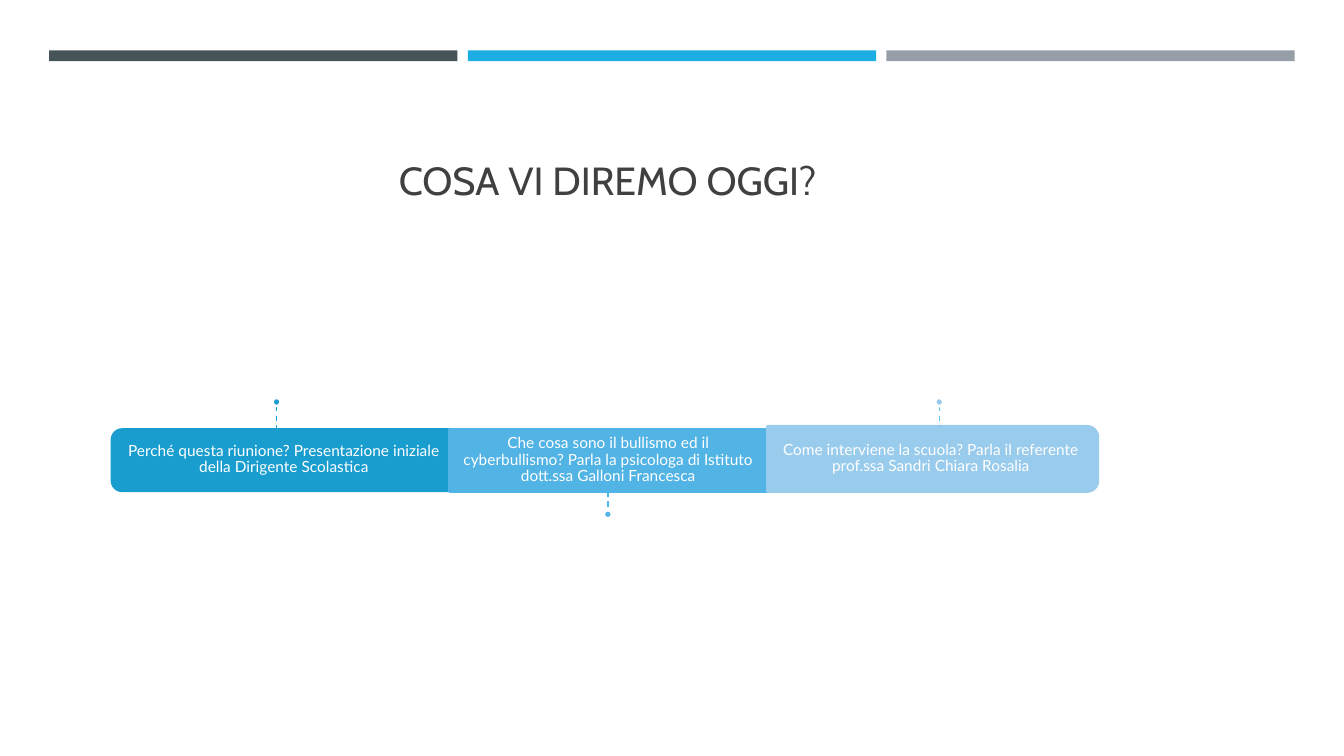
from pptx import Presentation
from pptx.dml.color import RGBColor
from pptx.enum import dml, shapes, text
from pptx.oxml.ns import qn
from pptx.util import Cm, Pt
from lxml import etree

WHITE = RGBColor(0xFF, 0xFF, 0xFF)
TITLE_GREY = RGBColor(0x40, 0x40, 0x40)
BAR_COLORS = [RGBColor(0x46, 0x53, 0x59), RGBColor(0x1C, 0xAD, 0xE4),
              RGBColor(0x96, 0x9F, 0xA7)]
SHAPE = shapes.MSO_SHAPE

TITLE = "COSA VI DIREMO OGGI?"
# Boxes are left, top, width, height in cm; turn is the block's rotation
TOPICS = [
    dict(label="Perché questa riunione? Presentazione iniziale della Dirigente Scolastica",
         block=(2.82, 10.82, 8.59, 1.55), label_box=(2.9, 10.88, 8.51, 1.4), turn=270,
         fill=RGBColor(0x19, 0x9D, 0xCF), stem=RGBColor(0x1B, 0xA5, 0xDA)),
    dict(label="Che cosa sono il bullismo ed il cyberbullismo? Parla la psicologa "
               "di Istituto dott.ssa Galloni Francesca",
         block=(11.33, 10.82, 8, 1.57), label_box=(11.33, 10.81, 8, 1.57), turn=0,
         fill=RGBColor(0x52, 0xB3, 0xE5), stem=RGBColor(0x48, 0xB8, 0xEC)),
    dict(label="Come interviene la scuola? Parla il referente prof.ssa Sandri Chiara Rosalia",
         block=(19.34, 10.74, 8.33, 1.65), label_box=(19.33, 10.82, 8.26, 1.47), turn=90,
         fill=RGBColor(0x99, 0xCB, 0xEC), stem=RGBColor(0x5A, 0xBE, 0xEF)),
]
STEM_X, STEM_STEP = 6.97, 8.35
DOT = 0.2
DOT_TOPS = [10.03, 12.86]  # above the band, below the band


def add_filled(slide, kind, box, fill, line=None):
    sp = slide.shapes.add_shape(kind, *map(Cm, box))
    sp.shadow.inherit = False
    sp.fill.solid()
    sp.fill.fore_color.rgb = fill
    if line is None:
        sp.line.fill.background()
    else:
        sp.line.color.rgb = line
        sp.line.width = Pt(1.75)
    return sp


def add_block(slide, box, turn, fill):
    if not turn:
        return add_filled(slide, SHAPE.RECTANGLE, box, fill, fill)
    # A quarter turn swaps width and height about the same centre
    left, top, width, height = box
    shift = (width - height) / 2
    upright = (left + shift, top - shift, height, width)
    sp = add_filled(slide, SHAPE.ROUND_2_SAME_RECTANGLE, upright, fill, fill)
    sp.rotation = turn
    return sp


def add_label(slide, box, label):
    tf = slide.shapes.add_textbox(*map(Cm, box)).text_frame
    tf.word_wrap = True
    tf.vertical_anchor = text.MSO_ANCHOR.MIDDLE
    tf.margin_left = tf.margin_right = tf.margin_top = tf.margin_bottom = Cm(0.23)
    p = tf.paragraphs[0]
    p.text = label
    p.alignment = text.PP_ALIGN.CENTER
    p.line_spacing = 0.9
    p.font.name, p.font.size = "Lato", Pt(11)
    p.font.color.rgb = WHITE


def add_stem(slide, x, top, bottom, color):
    line = slide.shapes.add_connector(shapes.MSO_CONNECTOR.STRAIGHT,
                                      Cm(x), Cm(top), Cm(x), Cm(bottom))
    line.line.color.rgb = color
    line.line.width = Pt(1)
    line.line.dash_style = dml.MSO_LINE.DASH
    etree.SubElement(line._element.spPr, qn("a:effectLst"))


def main():
    prs = Presentation()
    prs.slide_width, prs.slide_height = Cm(33.87), Cm(19.05)
    slide = prs.slides.add_slide(prs.slide_layouts[5])

    # Top bars
    for i, color in enumerate(BAR_COLORS):
        add_filled(slide, SHAPE.RECTANGLE, (1.24 + i * 10.55, 1.27, 10.29, 0.27), color)

    # Title
    title = slide.shapes.title
    title.left, title.top, title.width, title.height = Cm(0), Cm(1.96), Cm(30.63), Cm(3.3)
    tf = title.text_frame
    tf.auto_size = text.MSO_AUTO_SIZE.NONE
    tf.vertical_anchor = text.MSO_ANCHOR.BOTTOM
    p = tf.paragraphs[0]
    p.text = TITLE
    p.alignment = text.PP_ALIGN.CENTER
    p.font.name, p.font.size = "Cabin", Pt(28)
    p.font.color.rgb = TITLE_GREY

    # Timeline: stems alternate above and below, between block edge and dot
    for i, topic in enumerate(TOPICS):
        add_block(slide, topic["block"], topic["turn"], topic["fill"])
        add_label(slide, topic["label_box"], topic["label"])
        x = STEM_X + i * STEM_STEP
        below = i % 2
        dot_top = DOT_TOPS[below]
        _, block_top, _, block_height = topic["block"]
        if below:
            add_stem(slide, x, block_top + block_height, dot_top, topic["stem"])
        else:
            add_stem(slide, x, dot_top + DOT, block_top, topic["stem"])
        add_filled(slide, SHAPE.OVAL, (x - DOT / 2, dot_top, DOT, DOT), topic["fill"], WHITE)

    prs.save("out.pptx")


if __name__ == "__main__":
    main()
